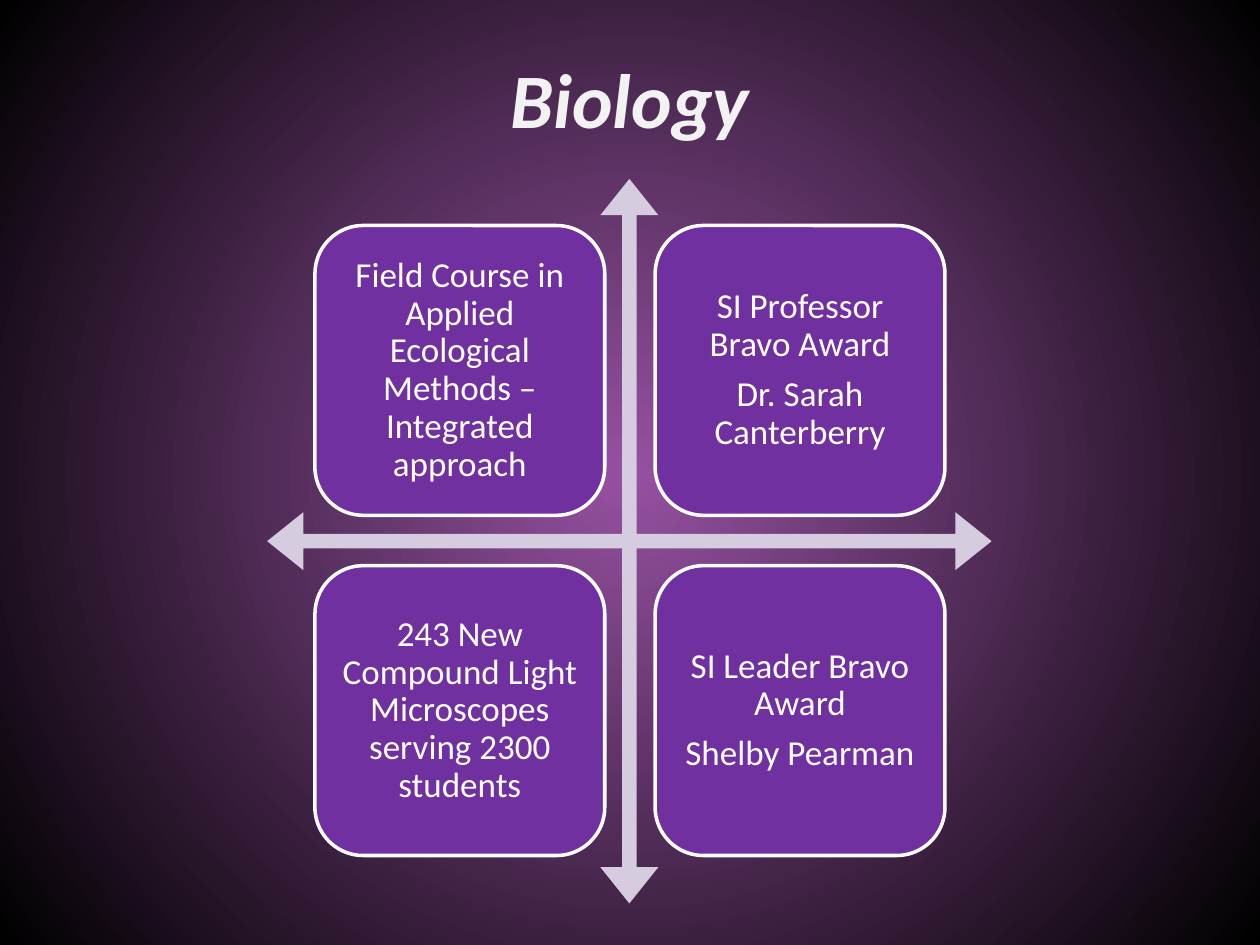
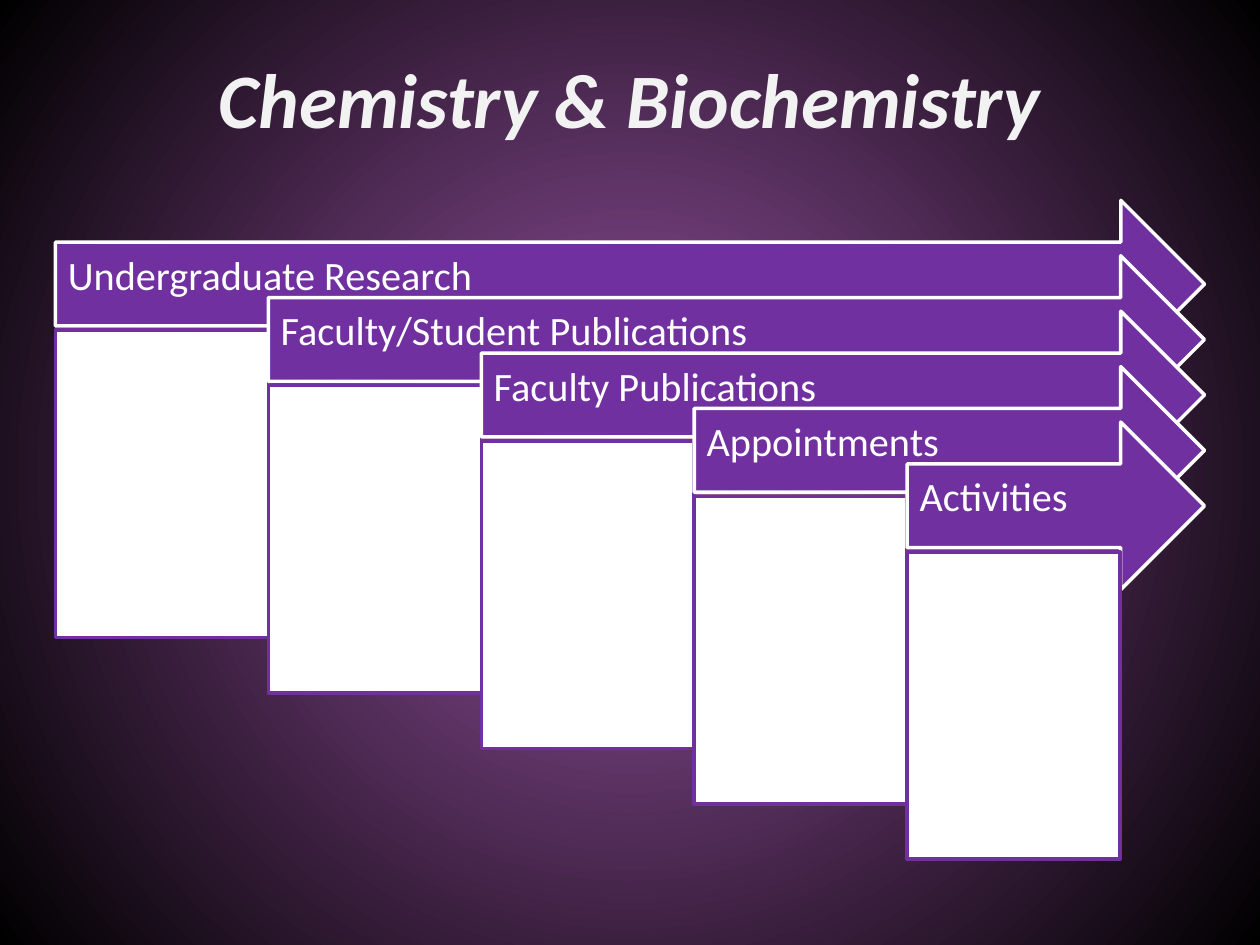
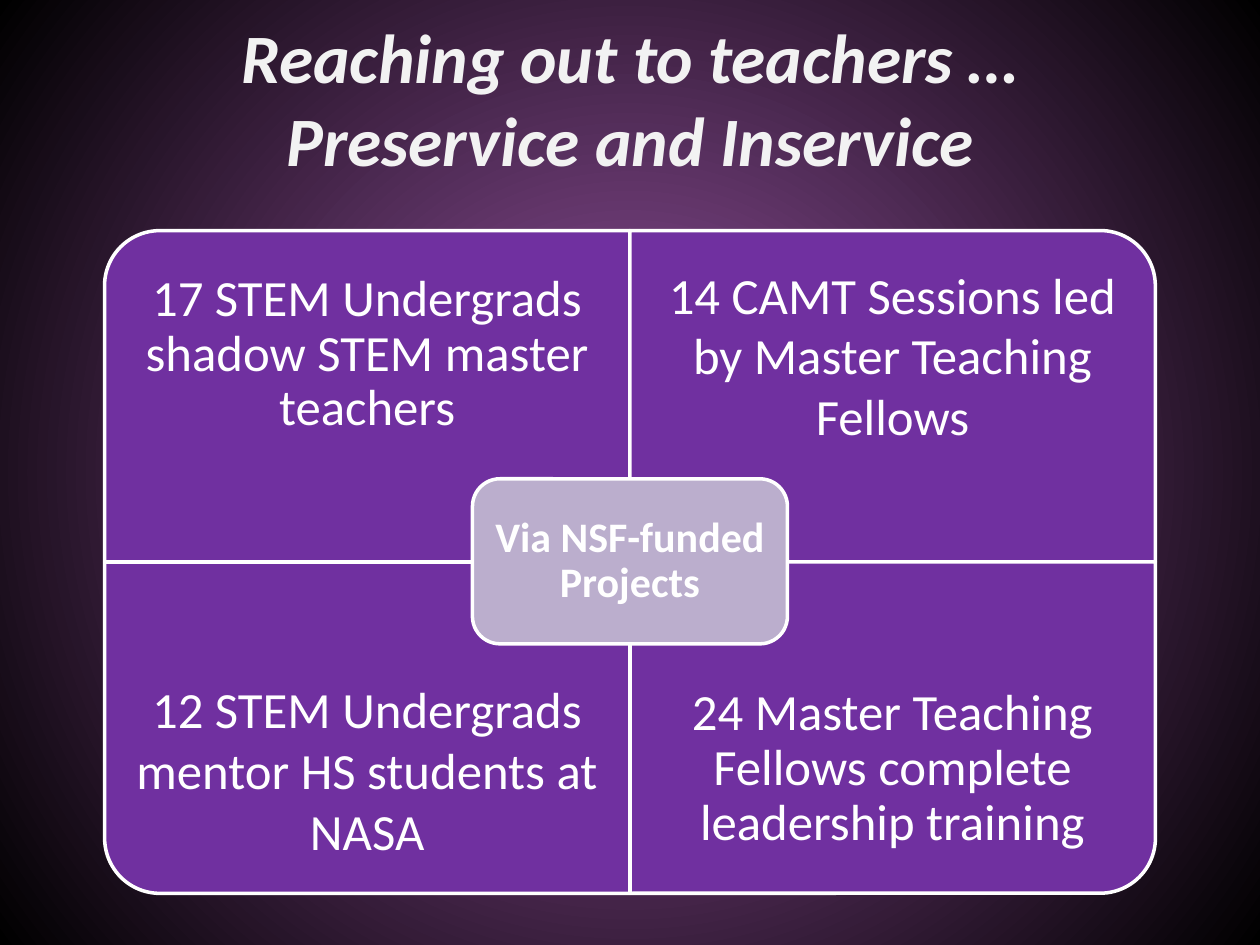
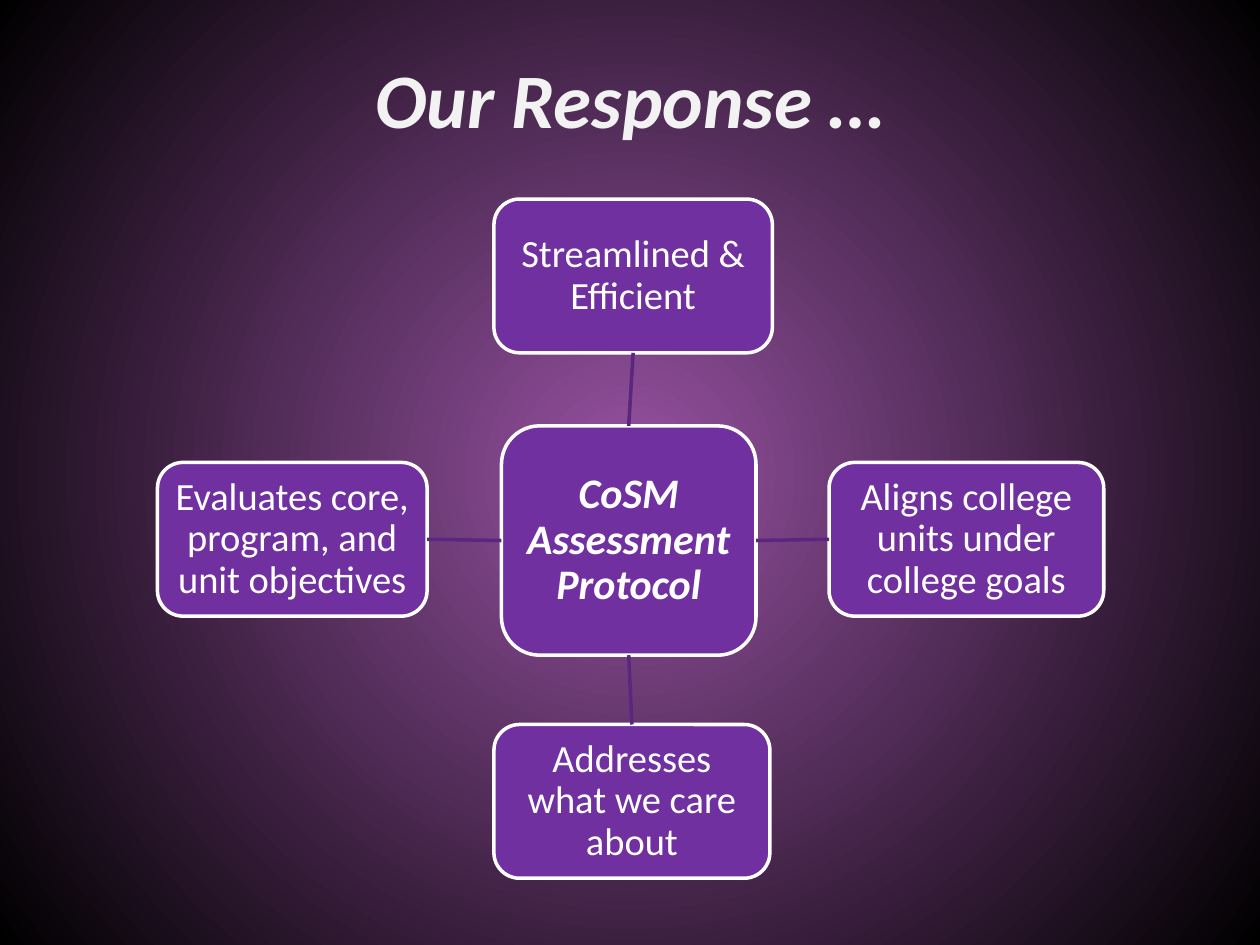
from copy import deepcopy

from lxml import etree
from pptx import Presentation
from pptx.dml.color import RGBColor
from pptx.enum.shapes import MSO_CONNECTOR, MSO_SHAPE as SHAPE
from pptx.enum.text import MSO_ANCHOR as ANCHOR, MSO_AUTO_SIZE, PP_ALIGN as ALIGN
from pptx.oxml.ns import qn
from pptx.util import Inches, Pt

FONT = "Calibri"
WHITE = RGBColor(0xFF, 0xFF, 0xFF)
PURPLE = RGBColor(0x70, 0x30, 0xA0)
DARK_PURPLE = RGBColor(0x5A, 0x26, 0x80)
LILAC = RGBColor(0xBB, 0xAE, 0xCD)
PALE_LILAC = RGBColor(0xD5, 0xCD, 0xDF)
TITLE_GREY = RGBColor(0xF2, 0xF2, 0xF2)
GLOW = RGBColor(0x96, 0x51, 0xA1)
BLACK = RGBColor(0, 0, 0)
LINE_WIDTH = Pt(2)


def write_text(tf, text, size, color=WHITE, bold=False, italic=False,
               align=ALIGN.CENTER, inset=0.1, spacing=0.9, after=0.35):
    paragraphs = [text] if isinstance(text, str) else text
    insets = inset if isinstance(inset, tuple) else (inset,) * 4
    tf.word_wrap = True
    tf.auto_size = MSO_AUTO_SIZE.NONE
    tf.vertical_anchor = ANCHOR.MIDDLE
    tf.margin_left, tf.margin_top, tf.margin_right, tf.margin_bottom = map(Inches, insets)
    for i, line in enumerate(paragraphs):
        p = tf.add_paragraph() if i else tf.paragraphs[0]
        p.text = line
        p.alignment = align
        p.line_spacing = spacing
        p.space_before = Pt(0)
        p.space_after = Pt(size * after)
        for r in p.runs:
            r.font.name = FONT
            r.font.size = Pt(size)
            r.font.bold = bold
            r.font.italic = italic
            r.font.color.rgb = color
        for br in p._p.findall(qn("a:br")):
            br.append(deepcopy(p.runs[0]._r.rPr))


class Deck:
    def __init__(self):
        self.prs = Presentation()
        self.prs.slide_width = Inches(10)
        self.prs.slide_height = Inches(7.5)
        self.slide = None
        self.paint_background()

    def paint_background(self):
        master = self.prs.slide_master
        fill = master.background.fill
        fill.gradient()
        for stop, color in zip(fill.gradient_stops, (GLOW, BLACK)):
            stop.color.rgb = color
        grad = master.element.find(".//" + qn("p:bgPr") + "/" + qn("a:gradFill"))
        grad.remove(grad.find(qn("a:lin")))
        circle = etree.SubElement(grad, qn("a:path"), {"path": "circle"})
        etree.SubElement(circle, qn("a:fillToRect"), {side: "50000" for side in "ltrb"})

    def new_slide(self, title, size=44):
        self.slide = self.prs.slides.add_slide(self.prs.slide_layouts[5])
        sp = self.slide.shapes.title
        sp.left, sp.top, sp.width, sp.height = map(Inches, (0, 0, 10, 1.55))
        write_text(sp.text_frame, title, size, color=TITLE_GREY, bold=True, italic=True,
                   inset=(0.1, 0.05, 0.1, 0.05), spacing=1, after=0)

    def shape(self, kind, left, top, width, height, fill=PURPLE, line=WHITE,
              rotation=0, adjustments=(), text=None, **style):
        if rotation % 180:
            left, top = left + (width - height) / 2, top + (height - width) / 2
            width, height = height, width
        sp = self.slide.shapes.add_shape(kind, *map(Inches, (left, top, width, height)))
        sp.shadow.inherit = False
        sp.rotation = rotation
        for i, value in enumerate(adjustments):
            sp.adjustments[i] = value
        sp.fill.solid()
        sp.fill.fore_color.rgb = fill
        if line is None:
            sp.line.fill.background()
        else:
            sp.line.color.rgb = line
            sp.line.width = LINE_WIDTH
        if text:
            write_text(sp.text_frame, text, **style)
        return sp

    def text_box(self, left, top, width, height, text, **style):
        sp = self.slide.shapes.add_textbox(*map(Inches, (left, top, width, height)))
        write_text(sp.text_frame, text, **style)

    def connect(self, start, start_side, end, end_side):
        line = self.slide.shapes.add_connector(MSO_CONNECTOR.STRAIGHT, 0, 0, 0, 0)
        line.begin_connect(start, start_side)
        line.end_connect(end, end_side)
        line.line.color.rgb = DARK_PURPLE
        line.line.width = LINE_WIDTH
        etree.SubElement(line._element.spPr, qn("a:effectLst"))


def biology(deck):
    deck.new_slide("Biology")
    deck.shape(SHAPE.QUAD_ARROW, 2.12, 1.42, 5.75, 5.75, fill=PALE_LILAC, line=None,
               adjustments=(0.02, 0.04, 0.05))
    highlights = [
        "Field Course in Applied Ecological Methods – Integrated approach",
        ["SI Professor Bravo Award", "Dr. Sarah Canterberry"],
        "243 New Compound Light Microscopes serving 2300 students",
        ["SI Leader Bravo Award", "Shelby Pearman"],
    ]
    for i, text in enumerate(highlights):
        row, col = divmod(i, 2)
        deck.shape(SHAPE.ROUNDED_RECTANGLE, 2.5 + 2.7 * col, 1.79 + 2.7 * row, 2.3, 2.3,
                   text=text, size=20, inset=0.08)


def chemistry(deck):
    deck.new_slide("Chemistry & Biochemistry")
    topics = ["Undergraduate Research", "Faculty/Student Publications",
              "Faculty Publications", "Appointments", "Activities"]
    column, step, right = 1.69, 0.44, 9.56
    for i, topic in enumerate(topics):
        left, top = 0.44 + column * i, 1.59 + step * i
        deck.shape(SHAPE.RIGHT_ARROW, left, top, right - left, 1.33, text=topic, size=23,
                   align=ALIGN.LEFT, inset=(0.1, 0.1, 0.28, 0.21))
        deck.shape(SHAPE.RECTANGLE, left, top + 1.03, column, 2.44, fill=WHITE, line=PURPLE)


def teachers(deck):
    deck.new_slide("Reaching out to teachers …\nPreservice and Inservice", size=39.6)
    width, height, text_height = 4.17, 2.63, 1.97
    tight, loose = {}, {"spacing": 1, "after": 0}
    quadrants = [
        ("17 STEM Undergrads shadow STEM master teachers", 270, tight),
        ("14 CAMT Sessions led by Master Teaching Fellows", 0, loose),
        ("12 STEM Undergrads mentor HS students at NASA", 180, loose),
        ("24 Master Teaching Fellows complete leadership training", 90, tight),
    ]
    for i, (text, rotation, spacing) in enumerate(quadrants):
        row, col = divmod(i, 2)
        left, top = 0.83 + width * col, 1.83 + height * row
        deck.shape(SHAPE.ROUND_1_RECTANGLE, left, top, width, height, rotation=rotation)
        deck.text_box(left, top + (height - text_height) * row, width, text_height, text,
                      size=29, inset=0.23, **spacing)
    deck.shape(SHAPE.ROUNDED_RECTANGLE, 3.75, 3.8, 2.5, 1.31, fill=LILAC,
               text="Via NSF-funded Projects", size=24, bold=True)


def response(deck):
    deck.new_slide("Our Response …")
    hub = deck.shape(SHAPE.ROUNDED_RECTANGLE, 3.98, 3.38, 2.02, 1.82,
                     text="CoSM Assessment Protocol", size=24, bold=True, italic=True,
                     inset=0.07)
    spokes = [
        ("Streamlined & Efficient", 3.92, 1.58, 2.21, 0),
        ("Aligns college units under college goals", 6.58, 3.67, 2.18, 3),
        ("Addresses what we care about", 3.92, 5.75, 2.19, 2),
        ("Evaluates core, program, and unit objectives", 1.25, 3.67, 2.14, 1),
    ]
    for text, left, top, width, side in spokes:
        spoke = deck.shape(SHAPE.ROUNDED_RECTANGLE, left, top, width, 1.22, text=text,
                           size=22, inset=0.06)
        deck.connect(hub, side, spoke, (side + 2) % 4)


def main():
    deck = Deck()
    for build in (biology, chemistry, teachers, response):
        build(deck)
    deck.prs.save("out.pptx")


if __name__ == "__main__":
    main()
